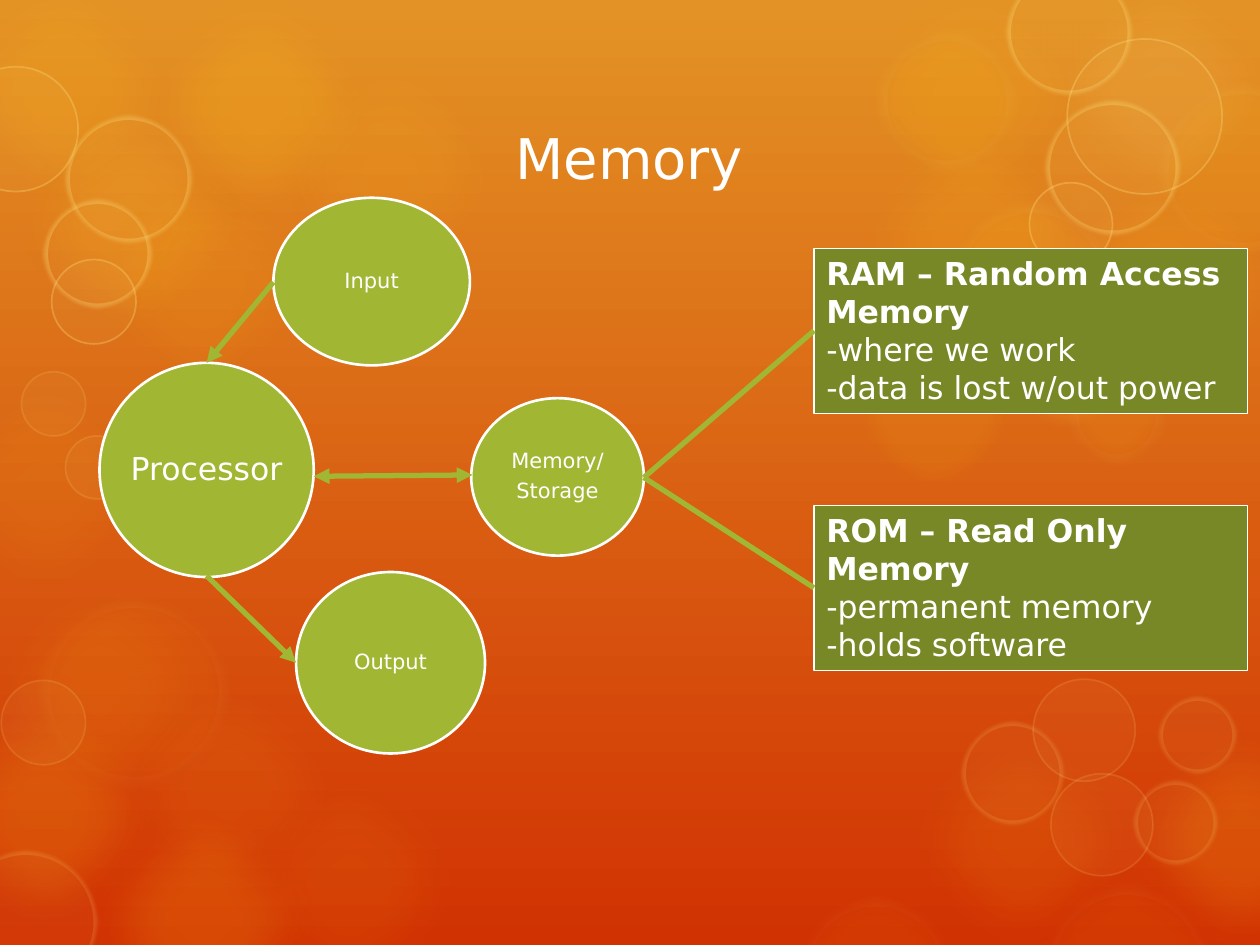
from lxml import etree
from pptx import Presentation
from pptx import util as u
from pptx.dml.color import RGBColor
from pptx.enum import shapes, text
from pptx.oxml import ns

WIDTH, HEIGHT = u.Inches(10), u.Inches(7.5)
COLUMN = WIDTH // 10
FONT = "DejaVu Sans"
COLORS = {
    "sky": "E39325", "ember": "D13202", "gold": "FDC61B", "cream": "FEEBAE",
    "lemon": "FFE281", "lime": "A1B633", "olive": "798826", "white": "FFFFFF",
}
BLOB = 2.09
BLOBS = {
    8: [(-0.26, 4.42), (0.77, 5.24), (1.73, 5.96), (-0.69, 2.82)],
    10: [(0.57, 1.2), (2.05, 0.31), (6.69, -0.29), (7.06, 5.62)],
    14: [(-0.55, -0.32)],
    15: [(0, 0.72), (8.2, 1.2), (6.69, 0.86)],
    16: [(0.57, 6.27), (8.81, 5.62), (-0.69, 5.41)],
    20: [(1.01, -0.18)],
}
GLOWS = {
    (10, 6): [(9.18, 0.65, 1.37), (6.94, 0.23, 1.14), (7.52, 1.59, 1.33),
              (7.89, 2.24, 1.14), (8.47, 2.91, 0.79)],
    (6, 4): [(0.3, 4.73, 1.53), (6.32, 7.1, 1.25), (8.27, 7.01, 1.35)],
}
RINGS = {
    (1, 15): [(0.01, 5.4, 0.67), (8.34, 6.14, 0.81), (8.2, 5.39, 0.81),
              (0.17, 2.95, 0.51), (0.52, 3.46, 0.5)],
    (5, 15): [(-0.36, 6.75, 1.13), (7.63, 5.73, 0.81), (9, 6.2, 0.66), (9.2, 5.53, 0.61)],
    (1, 30): [(-0.37, 0.53, 0.99), (0.41, 2.06, 0.67), (8.47, 0.31, 1.23), (8.17, 1.45, 0.66)],
    (5, 30): [(0.52, 0.92, 1), (0.35, 1.59, 0.85), (7.99, -0.24, 0.99), (8.3, 0.8, 1.06)],
}


def columns(*lengths):
    return [round(length * COLUMN) for length in lengths]


def color(name):
    return RGBColor.from_string(COLORS[name])


def add_child(parent, tag, **attributes):
    return etree.SubElement(parent, ns.qn(tag), attributes)


def paint(fill, name, opacity=100):
    fill.solid()
    fill.fore_color.rgb = color(name)
    if opacity < 100:
        tint = next(fill._xPr.iter(ns.qn("a:srgbClr")))
        add_child(tint, "a:alpha", val=str(opacity * 1000))


def outline(shape, name, width, opacity=100):
    paint(shape.line.fill, name, opacity)
    shape.line.width = u.Pt(width)


def write(shape, lines, size, align, bold_first=False):
    frame = shape.text_frame
    frame.text = "\n".join(lines)
    for index, para in enumerate(frame.paragraphs):
        para.alignment = align
        for span in para.runs:
            span.font.name = FONT
            span.font.size = u.Pt(size)
            span.font.bold = bold_first and index == 0
            span.font.color.rgb = color("white")
    return frame


def set_background(page):
    fill = page.background.fill
    fill.gradient()
    fill.gradient_angle = 270
    for stop, name, position in zip(fill.gradient_stops, ("sky", "ember"), (0, 1)):
        stop.color.rgb = color(name)
        stop.position = position


def add_disc(page, circle, fill, opacity, blur=0, border=None):
    left, top, size = circle
    disc = page.shapes.add_shape(
        shapes.MSO_SHAPE.OVAL, *columns(left, top, size, size))
    paint(disc.fill, fill, opacity)
    if border:
        outline(disc, *border)
    else:
        disc.line.fill.background()
    disc.shadow.inherit = False
    if blur:
        effects = disc.element.spPr.find(ns.qn("a:effectLst"))
        add_child(effects, "a:softEdge", rad=str(u.Pt(blur)))
    page.slide_layout.shapes.element.append(disc.element)


def add_backdrop(page):
    set_background(page)
    for opacity, corners in BLOBS.items():
        for corner in corners:
            add_disc(page, (*corner, BLOB), "gold", opacity, 25)
    add_disc(page, (8.2, -0.32, BLOB), "lemon", 10, 25)
    add_disc(page, (6.75, 2.62, 1.33), "gold", 10, 10)
    for (opacity, edge), circles in GLOWS.items():
        for circle in circles:
            add_disc(page, circle, "gold", opacity, 10, ("cream", 14, edge))
    for (width, edge), circles in RINGS.items():
        for circle in circles:
            blur = 2.5 if width > 1 else 0
            add_disc(page, circle, "lemon", 5, blur, ("lemon", width, edge))


def add_title(page, title):
    box = page.shapes.title
    box.left, box.top, box.width, box.height = columns(1.1, 0.74, 7.79, 1.01)
    frame = write(box, [title], 32, text.PP_ALIGN.CENTER)
    frame.vertical_anchor = text.MSO_ANCHOR.MIDDLE


def add_node(page, lines, place, size=12):
    node = page.shapes.add_shape(shapes.MSO_SHAPE.OVAL, *columns(*place))
    node.shadow.inherit = False
    paint(node.fill, "lime")
    outline(node, "white", 1.5)
    frame = write(node, lines, size, text.PP_ALIGN.CENTER)
    frame.vertical_anchor = text.MSO_ANCHOR.MIDDLE
    frame.word_wrap = False
    for para in frame.paragraphs:
        para.line_spacing = 0.9
    for para in frame.paragraphs[:-1]:
        para.space_after = u.Pt(4.5)


def add_note(page, lines, top):
    note = page.shapes.add_shape(
        shapes.MSO_SHAPE.RECTANGLE, *columns(6.46, top, 3.44, 1.31))
    note.shadow.inherit = False
    paint(note.fill, "olive")
    outline(note, "white", 0.75)
    frame = write(note, lines, 18, text.PP_ALIGN.LEFT, bold_first=True)
    frame.vertical_anchor = text.MSO_ANCHOR.TOP
    frame.word_wrap = True
    frame.auto_size = text.MSO_AUTO_SIZE.SHAPE_TO_FIT_TEXT
    return note


def add_link(page, start, end, arrows=()):
    link = page.shapes.add_connector(
        shapes.MSO_CONNECTOR.STRAIGHT, *columns(*start, *end))
    outline(link, "lime", 3)
    for arrow in arrows:
        add_child(link.line._get_or_add_ln(), arrow, type="triangle")
    add_child(link.element.spPr, "a:effectLst")
    return link


def main():
    deck = Presentation()
    deck.slide_width, deck.slide_height = WIDTH, HEIGHT
    page = deck.slides.add_slide(deck.slide_layouts[5])
    add_backdrop(page)
    add_title(page, "Memory")
    add_node(page, ["Input"], (2.17, 1.57, 1.56, 1.33))
    add_node(page, ["Memory/", "Storage"], (3.74, 3.16, 1.37, 1.25))
    add_node(page, ["Output"], (2.35, 4.54, 1.5, 1.44))
    add_node(page, ["Processor"], (0.79, 2.88, 1.7, 1.7), 18)
    notes = [
        add_note(page, ["RAM – Random Access Memory", "-where we work",
                        "-data is lost w/out power"], 1.97),
        add_note(page, ["ROM – Read Only Memory", "-permanent memory",
                        "-holds software"], 4.01),
    ]
    for note in notes:
        add_link(page, (5.11, 3.79), (6.46, 3.79)).end_connect(note, 1)
    add_link(page, (2.49, 3.78), (3.75, 3.77), ("a:headEnd", "a:tailEnd"))
    add_link(page, (2.17, 2.24), (1.64, 2.88), ("a:tailEnd",))
    add_link(page, (1.64, 4.57), (2.35, 5.26), ("a:tailEnd",))
    deck.save("out.pptx")


if __name__ == "__main__":
    main()
